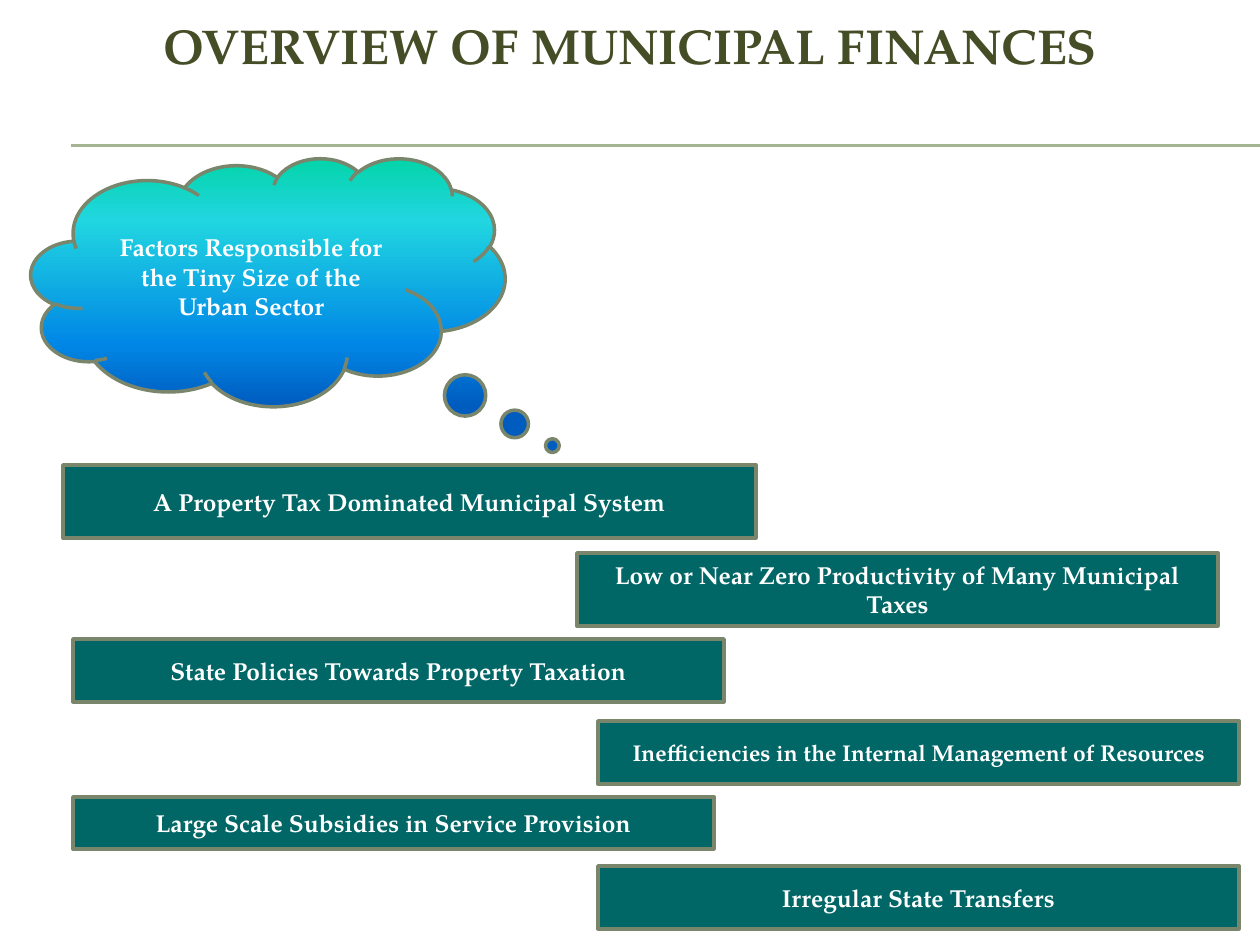
from lxml import etree
from pptx import Presentation
from pptx.dml.color import RGBColor
from pptx.enum.shapes import MSO_CONNECTOR, MSO_SHAPE
from pptx.enum.text import MSO_ANCHOR, PP_ALIGN
from pptx.oxml.ns import qn
from pptx.util import Pt

EMU_PER_PX = 914400 / 126
FONT = "TeX Gyre Pagella"
TITLE, WHITE, TEAL, BORDER, RULE = "444D26", "FFFFFF", "006666", "7A866C", "A5B592"
SKY = [(0, "03D4A8"), (25, "21D6E0"), (75, "0087E6"), (100, "005CBF")]

# left, top, width, height, text, text size
FACTORS = [
    (63, 465, 693, 73, "A Property Tax Dominated Municipal System", 14),
    (577, 553, 641, 73, "Low or Near Zero Productivity of Many Municipal Taxes", 14),
    (73, 639, 651, 63, "State Policies Towards Property Taxation", 14),
    (598, 721, 641, 63, "Inefficiencies in the Internal Management of Resources", 13),
    (73, 797, 641, 52, "Large Scale Subsidies in Service Provision", 14),
    (598, 866, 641, 63, "Irregular State Transfers", 14),
]


def px(length):
    return round(length * EMU_PER_PX)


def color(hex_text):
    return RGBColor.from_string(hex_text)


def write_text(box, text, *, size=14, hue=WHITE, bold=True):
    frame = box.text_frame
    frame.word_wrap = True
    frame.vertical_anchor = MSO_ANCHOR.MIDDLE
    para = frame.paragraphs[0]
    para.alignment = PP_ALIGN.CENTER
    span = para.add_run()
    span.text = text
    span.font.name = FONT
    span.font.size = Pt(size)
    span.font.bold = bold
    span.font.color.rgb = color(hue)


def add_title(page, text):
    box = page.shapes.add_textbox(px(63), px(6), px(1134), px(77))
    write_text(box, text, size=28, hue=TITLE)


def add_rule(page, top):
    rule = page.shapes.add_connector(
        MSO_CONNECTOR.STRAIGHT, px(71), px(top), px(1260), px(top))
    rule.line.color.rgb = color(RULE)
    rule.line.width = Pt(0.75)
    etree.SubElement(rule.element.spPr, qn("a:effectLst"))


def add_outlined(page, preset, bounds):
    shape = page.shapes.add_shape(preset, *map(px, bounds))
    shape.shadow.inherit = False
    shape.line.color.rgb = color(BORDER)
    shape.line.width = Pt(2)
    return shape


def fill_downwards(shape, stops):
    """Fill with a gradient that runs from top to bottom."""
    shape.fill.gradient()
    shape.fill.gradient_angle = 270
    stop_list = shape.element.spPr.find(".//" + qn("a:gsLst"))
    for old_stop in list(stop_list):
        stop_list.remove(old_stop)
    for percent, hue in stops:
        stop = etree.SubElement(stop_list, qn("a:gs"), pos=str(percent * 1000))
        etree.SubElement(stop, qn("a:srgbClr"), val=hue)


def add_thought_cloud(page, text):
    cloud = add_outlined(page, MSO_SHAPE.CLOUD_CALLOUT, (31, 158, 474, 248))
    cloud.adjustments[0] = 0.6
    cloud.adjustments[1] = 0.66
    fill_downwards(cloud, SKY)
    write_text(cloud, text)


def add_factor(page, bounds, text, size):
    bar = add_outlined(page, MSO_SHAPE.RECTANGLE, bounds)
    bar.fill.solid()
    bar.fill.fore_color.rgb = color(TEAL)
    write_text(bar, text, size=size)


def main():
    deck = Presentation()
    deck.slide_width, deck.slide_height = px(1260), px(945)
    page = deck.slides.add_slide(deck.slide_layouts[6])

    for top in (145, 146):
        add_rule(page, top)
    add_title(page, "OVERVIEW OF MUNICIPAL FINANCES")
    add_thought_cloud(page, "Factors Responsible for the Tiny Size of the Urban Sector")
    for *bounds, text, size in FACTORS:
        add_factor(page, bounds, text, size)

    deck.save("out.pptx")


if __name__ == "__main__":
    main()
